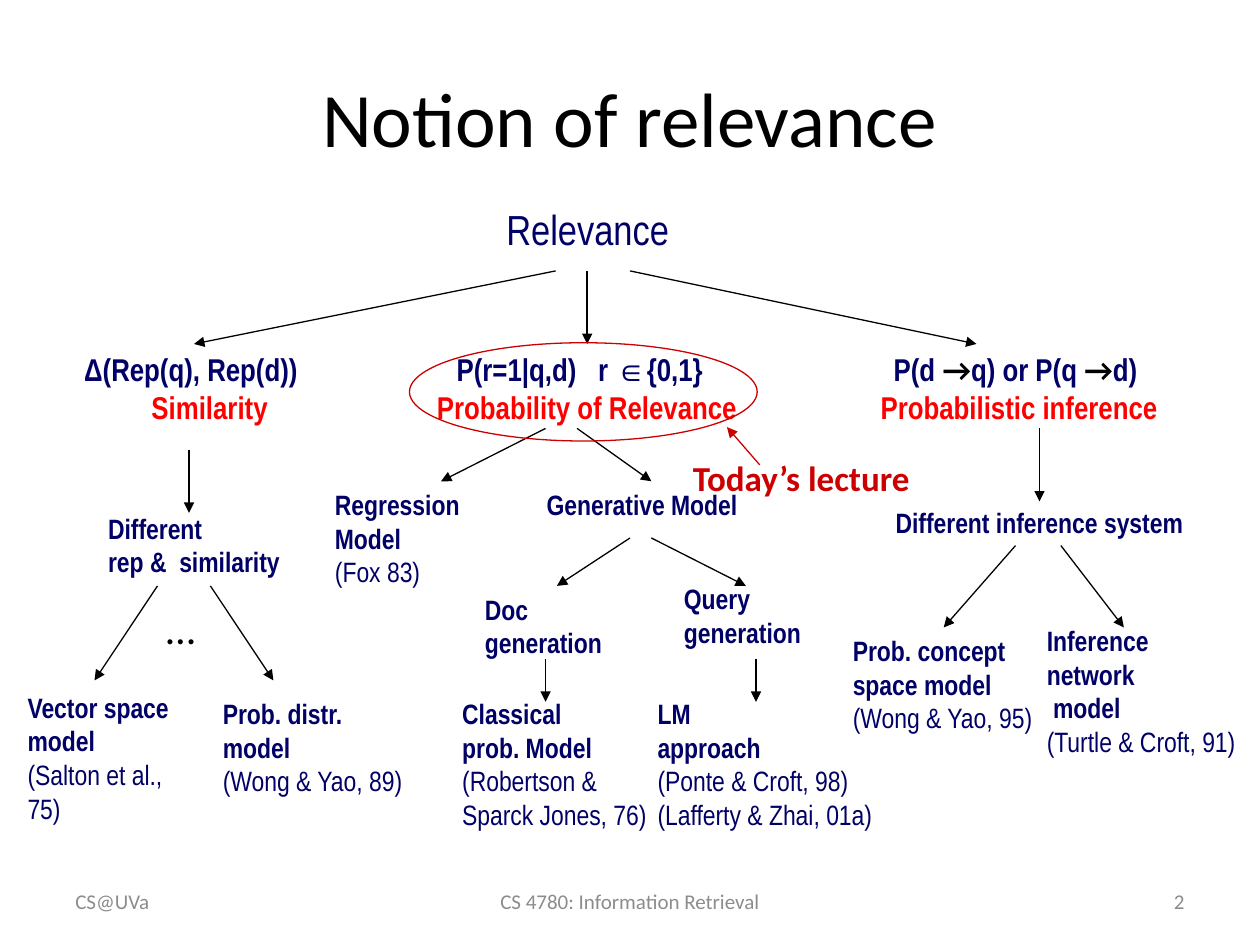
from pptx import Presentation
from pptx.dml.color import RGBColor
from pptx.enum.shapes import MSO_CONNECTOR, MSO_SHAPE
from pptx.enum.text import MSO_ANCHOR, MSO_AUTO_SIZE, PP_ALIGN
from pptx.oxml.ns import qn
from pptx.util import Inches, Pt
from lxml import etree

COLORS = {
    "black": "000000",
    "navy": "000066",
    "red": "FF0000",
    "crimson": "CC0000",
    "gray": "8C8C8C",
}
NARROW = "Arial Narrow"
PLAIN = "Calibri"


def rgb(name):
    return RGBColor.from_string(COLORS[name])


def span(text, size=16, color="navy", font=NARROW, bold=False, spacing=0):
    return text, size, color, font, bold, spacing


def add_span(para, text, size, color, font, bold, spacing):
    run = para.add_run()
    run.text = text
    run.font.size = Pt(size)
    run.font.name = font
    run.font.bold = bold
    run.font.color.rgb = rgb(color)
    if spacing:
        run.font._element.set("spc", str(spacing))


def add_text(page, box, lines, aligns=(PP_ALIGN.LEFT,), wrap=False, fixed=False):
    shape = page.shapes.add_textbox(*[Inches(value) for value in box])
    frame = shape.text_frame
    frame.word_wrap = wrap or fixed
    frame.auto_size = MSO_AUTO_SIZE.NONE if fixed else MSO_AUTO_SIZE.SHAPE_TO_FIT_TEXT
    frame.vertical_anchor = MSO_ANCHOR.MIDDLE if fixed else MSO_ANCHOR.TOP
    for index, spans in enumerate(lines):
        para = frame.add_paragraph() if index else frame.paragraphs[0]
        para.alignment = aligns[min(index, len(aligns) - 1)]
        for parts in spans:
            add_span(para, *parts)
    return shape


def add_arrow(page, start, end, color="black"):
    arrow = page.shapes.add_connector(
        MSO_CONNECTOR.STRAIGHT, *[Inches(value) for value in (*start, *end)])
    arrow.line.color.rgb = rgb(color)
    arrow.line.width = Pt(0.75)
    line = arrow.line._get_or_add_ln()
    etree.SubElement(line, qn("a:tailEnd"), type="triangle")
    etree.SubElement(arrow._element.spPr, qn("a:effectLst"))
    return arrow


def add_arrows(page, left, top, arrows):
    for x1, y1, x2, y2 in arrows:
        add_arrow(page, (left + x1, top + y1), (left + x2, top + y2))


def add_node(page, box, names, sources=(), wrap=False):
    lines = [[span(name, bold=True)] for name in names]
    lines += [[span(source)] for source in sources]
    return add_text(page, box, lines, wrap=wrap)


def add_title(page, box):
    add_text(page, box, [[span("Notion of relevance", 44, "black", PLAIN)]],
             [PP_ALIGN.CENTER], fixed=True)


def add_footer(page, box):
    left, top, width, height = box
    side, middle = 2.33, 3.17
    parts = [
        ("CS@UVa", left, side, PP_ALIGN.LEFT),
        ("CS 4780: Information Retrieval", left + (width - middle) / 2, middle, PP_ALIGN.CENTER),
        ("2", left + width - side, side, PP_ALIGN.RIGHT),
    ]
    for text, x, part_width, align in parts:
        add_text(page, (x, top, part_width, height),
                 [[span(text, 12, "gray", PLAIN)]], [align], fixed=True)


def add_root(page, box):
    left, top, width, height = box
    add_text(page, (left + 3.35, top, 1.5, 0.5), [[span("Relevance", 24)]])
    add_arrows(page, left, top, [
        (3.84, 0.58, 0.97, 1.16), (4.09, 0.58, 4.09, 1.16), (4.43, 0.58, 7.18, 1.16)])

    def formula(text, spacing=0):
        return span(text, 18, bold=True, spacing=spacing)

    implies = span("→", 18, "black", PLAIN, True)
    centered = [PP_ALIGN.CENTER]
    notions = [
        (0, 2.13, [formula("Δ(Rep(q), Rep(d))")], "Similarity",
         [PP_ALIGN.LEFT, PP_ALIGN.CENTER], True),
        (2.74, 2.64, [formula("P(r=1|q,d)"), formula(" ", 820), formula("r ∈{0,1} ")],
         "Probability of Relevance", centered, False),
        (6.26, 2.46, [formula("P(d "), implies, formula("q) or P(q "), implies, formula("d)")],
         "Probabilistic inference", centered, False),
    ]
    for x, notion_width, spans, name, aligns, wrap in notions:
        label = [formula(" "), span(name, 18, "red", bold=True)]
        add_text(page, (left + x, top + 1.16, notion_width, 0.7),
                 [spans, label], aligns, wrap=wrap)


def add_similarity(page, box):
    left, top, width, height = box
    add_text(page, (left + 0.64, top + 0.44, 1.56, 0.64), [
        [span("Different", bold=True)],
        [span("rep &", bold=True), span(" ", bold=True, spacing=360),
         span("similarity", bold=True)]])
    add_node(page, (left, top + 1.86, 1.58, 0.9),
             ["Vector space", "model"], ["(Salton et al., 75)"])
    add_node(page, (left + 1.55, top + 1.91, 1.64, 0.9),
             ["Prob. distr.", "model"], ["(Wong & Yao, 89)"])
    add_text(page, (left + 1.1, top + 1.16, 0.53, 0.5), [[span("…", 24, "black", PLAIN)]])
    add_arrows(page, left, top, [
        (1.38, 0, 1.38, 0.5), (1.13, 1.08, 0.63, 1.83), (1.55, 1.08, 2.05, 1.83)])


def add_probability(page, box):
    left, top, width, height = box
    add_node(page, (left + 1.68, top + 0.42, 1.77, 0.37), ["Generative Model"], wrap=True)
    nodes = [
        (0, 0.42, 1.19, 0.9, ["Regression", "Model"], ["(Fox 83)"]),
        (1.19, 1.25, 1.13, 0.64, ["Doc", "generation"], []),
        (2.77, 1.17, 1.13, 0.64, ["Query", "generation"], []),
        (1.01, 2.08, 1.67, 1.17, ["Classical", "prob. Model"],
         ["(Robertson &", "Sparck Jones, 76)"]),
        (2.56, 2.08, 1.91, 1.17, ["LM", "approach"],
         ["(Ponte & Croft, 98)", "(Lafferty & Zhai, 01a)"]),
    ]
    for x, y, node_width, node_height, names, sources in nodes:
        add_node(page, (left + x, top + y, node_width, node_height), names, sources)
    add_arrows(page, left, top, [
        (1.77, 0, 0.94, 0.42), (2.02, 0, 2.61, 0.42),
        (2.44, 0.87, 1.86, 1.25), (2.61, 0.87, 3.36, 1.25),
        (1.77, 1.83, 1.77, 2.17), (3.44, 1.83, 3.44, 2.17)])


def add_inference(page, box):
    left, top, width, height = box
    add_node(page, (left + 0.34, top + 0.56, 2.64, 0.37),
             ["Different inference system"], wrap=True)
    concept = add_node(page, (left, top + 1.58, 1.64, 0.9),
                       ["Prob. concept", "space model"], ["(Wong & Yao, 95)"])
    add_node(page, (left + 1.54, top + 1.5, 1.7, 1.17),
             ["Inference", "network", " model"], ["(Turtle & Croft, 91)"])
    add_arrows(page, left, top, [(1.58, 0, 1.58, 0.58), (1.75, 0.93, 2.25, 1.58)])
    arrow = add_arrow(page, (left + 1.39, top + 0.93), (left + 0.82, top + 1.58))
    arrow.end_connect(concept, 0)


def add_highlight(page, box):
    left, top, width, height = box
    ring = page.shapes.add_shape(
        MSO_SHAPE.OVAL, Inches(left), Inches(top), Inches(2.76), Inches(0.78))
    ring.shadow.inherit = False
    ring.fill.background()
    ring.line.color.rgb = rgb("crimson")
    ring.line.width = Pt(0.75)
    add_text(page, (left + 2.15, top + 0.85, 2.04, 0.43),
             [[span("Today’s lecture", 20, "crimson", PLAIN, True)]])
    add_arrow(page, (left + 2.78, top + 0.97), (left + 2.52, top + 0.67), "crimson")


def main():
    deck = Presentation()
    deck.slide_width, deck.slide_height = Inches(10), Inches(7.5)
    page = deck.slides.add_slide(deck.slide_layouts[6])
    add_title(page, (0.5, 0.3, 9, 1.25))
    add_root(page, (0.57, 1.57, 8.72, 1.86))
    add_similarity(page, (0.12, 3.57, 3.19, 2.81))
    add_probability(page, (2.56, 3.4, 4.47, 3.25))
    add_inference(page, (6.67, 3.4, 3.24, 2.67))
    add_highlight(page, (3.25, 2.72, 4.19, 1.28))
    add_footer(page, (0.5, 6.95, 9, 0.4))
    deck.save("out.pptx")


if __name__ == "__main__":
    main()
